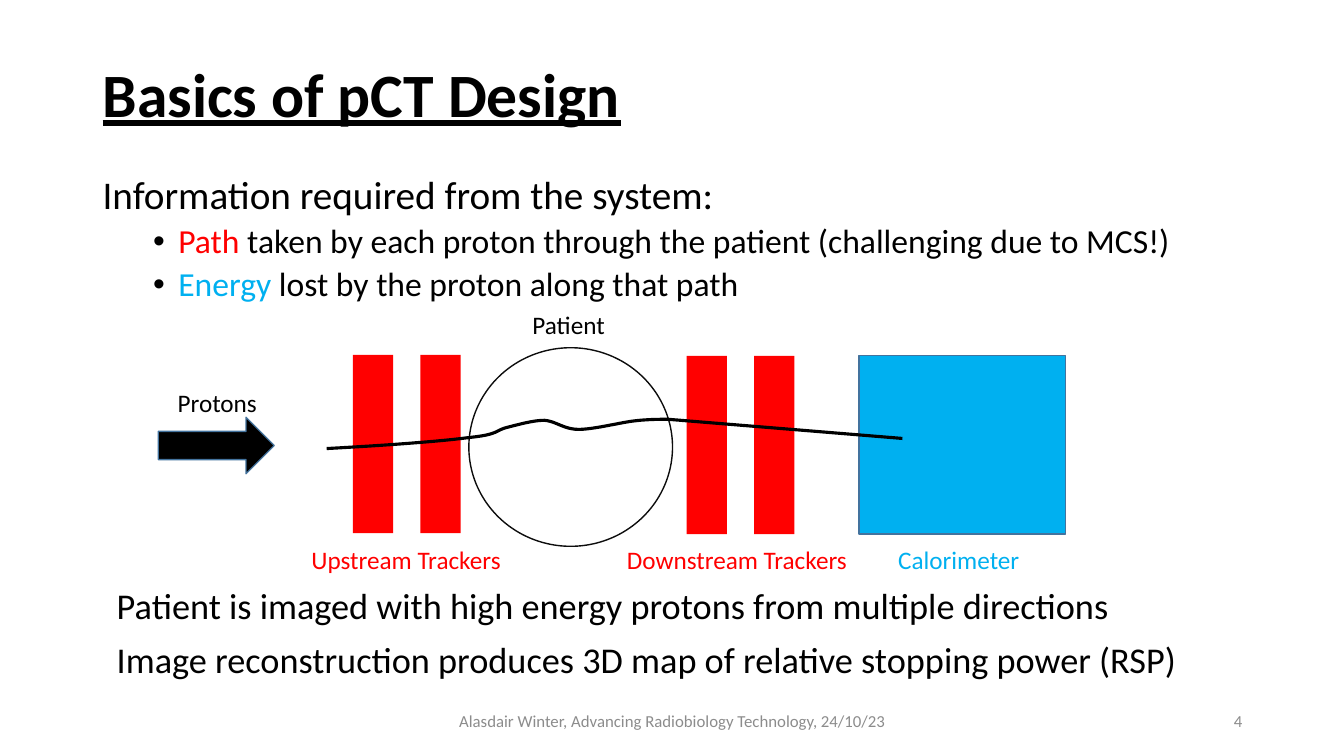
import pptx
import pptx.dml.color
import pptx.enum.shapes
import pptx.enum.text
import pptx.oxml
import pptx.oxml.ns
import pptx.util

Inches, Pt = pptx.util.Inches, pptx.util.Pt
SHAPE = pptx.enum.shapes.MSO_SHAPE
ALIGN = pptx.enum.text.PP_ALIGN
ANCHOR = pptx.enum.text.MSO_ANCHOR

BLACK, RED, BLUE, GREY, EDGE = "000000", "FF0000", "00B0F0", "8C8C8C", "43739E"


def color(value):
    return pptx.dml.color.RGBColor.from_string(value)


def apply(target, values):
    for name, value in values.items():
        setattr(target, name, value)


def bezier(p0, p1, p2, p3, steps=12):
    """Points along a cubic curve, leaving out its start."""
    for i in range(1, steps + 1):
        t = i / steps
        u = 1 - t
        yield tuple(u**3 * a + 3 * u * u * t * b + 3 * u * t * t * c + t**3 * d
                    for a, b, c, d in zip(p0, p1, p2, p3))


class SlideBuilder:
    font = "Calibri"

    def __init__(self, prs):
        self.s = prs.slides.add_slide(prs.slide_layouts[6])

    def text(self, box, paragraphs, anchor=ANCHOR.TOP):
        """Each paragraph is (runs, size, format); each run is (text, colour)."""
        sp = self.s.shapes.add_textbox(*map(Inches, box))
        tf = sp.text_frame
        apply(tf, {"word_wrap": True, "vertical_anchor": anchor})
        for i, (runs, size, fmt) in enumerate(paragraphs):
            p = tf.add_paragraph() if i else tf.paragraphs[0]
            fmt = dict(fmt)
            bullet = fmt.pop("bullet", False)
            font = fmt.pop("font", {})
            apply(p, fmt)
            if bullet:
                self.bullet(p)
            for words, fill in runs:
                r = p.add_run()
                r.text = words
                apply(r.font, {"name": self.font, "size": Pt(size), **font})
                r.font.color.rgb = color(fill)

    def bullet(self, p):
        pPr = p._p.get_or_add_pPr()
        pPr.set("marL", str(Inches(0.75)))
        pPr.set("indent", str(Inches(-0.25)))
        ns = pptx.oxml.ns.nsdecls("a")
        for xml in (f'<a:buClr {ns}><a:srgbClr val="{BLACK}"/></a:buClr>',
                    f'<a:buFont {ns} typeface="Arial"/>',
                    f'<a:buChar {ns} char="•"/>'):
            pPr.append(pptx.oxml.parse_xml(xml))

    def label(self, box, words, fill=BLACK, align=ALIGN.LEFT):
        self.text(box, [([(words, fill)], 18, {"alignment": align})])

    def footer(self, box, words, align):
        self.text(box, [([(words, GREY)], 12, {"alignment": align})], ANCHOR.MIDDLE)

    def style(self, sp, fill, line, width):
        sp.shadow.inherit = False
        if fill:
            sp.fill.solid()
            sp.fill.fore_color.rgb = color(fill)
        else:
            sp.fill.background()
        if line:
            sp.line.color.rgb = color(line)
            sp.line.width = Pt(width)
        else:
            sp.line.fill.background()

    def shape(self, kind, box, fill=None, line=None, width=1):
        sp = self.s.shapes.add_shape(kind, *map(Inches, box))
        self.style(sp, fill, line, width)

    def curve(self, start, curves, end, width):
        points = [start]
        for c1, c2, stop in curves:
            points.extend(bezier(points[-1], c1, c2, stop))
        points.append(end)
        emu = [(Inches(x), Inches(y)) for x, y in points]
        fb = self.s.shapes.build_freeform(*emu[0])
        fb.add_line_segments(emu[1:], close=False)
        self.style(fb.convert_to_shape(), None, BLACK, width)


def main():
    prs = pptx.Presentation()
    apply(prs, {"slide_width": Inches(13.33), "slide_height": Inches(7.5)})
    b = SlideBuilder(prs)

    # Title and required information
    major = {"line_spacing": 0.9, "space_before": Pt(10)}
    minor = {"line_spacing": 0.9, "space_before": Pt(5), "level": 1, "bullet": True}
    heading = {"line_spacing": 0.9, "font": {"bold": True, "underline": True}}
    b.text((0.92, 0.24, 11.5, 1.45),
           [([("Basics of pCT Design", BLACK)], 44, heading)], ANCHOR.MIDDLE)
    b.text((0.92, 1.69, 11.5, 1.42), [
        ([("Information required from the system:", BLACK)], 28, major),
        ([("Path", RED),
          (" taken by each proton through the patient (challenging due to MCS!)", BLACK)],
         24, minor),
        ([("Energy", BLUE), (" lost by the proton along that path", BLACK)], 24, minor),
    ])

    # Patient, trackers, beam and calorimeter
    b.shape(SHAPE.OVAL, (4.65, 3.45, 2.02, 1.97), line="0D0D0D")
    for left, top in ((3.5, 3.52), (4.17, 3.52), (6.81, 3.53), (7.48, 3.53)):
        b.shape(SHAPE.RECTANGLE, (left, top, 0.4, 1.77), RED)
    b.shape(SHAPE.RIGHT_ARROW, (1.57, 4.14, 1.15, 0.56), BLACK, EDGE)
    b.shape(SHAPE.RECTANGLE, (8.52, 3.53, 2.05, 1.77), BLUE, EDGE)

    # Diagram labels
    b.label((1.53, 3.79, 1.25, 0.4), "Protons", align=ALIGN.CENTER)
    b.label((4.57, 3.02, 2.14, 0.4), "Patient", align=ALIGN.CENTER)
    for left, width, words, fill in ((2.99, 2.14, "Upstream Trackers", RED),
                                     (6.12, 2.43, "Downstream Trackers", RED),
                                     (8.81, 2.43, "Calorimeter", BLUE)):
        b.label((left, 5.35, width, 0.4), words, fill)

    # Proton path
    b.curve((3.24, 4.45), [
        ((3.8, 4.42), (4.36, 4.38), (4.66, 4.34)),
        ((4.95, 4.31), (4.91, 4.27), (5.03, 4.24)),
        ((5.15, 4.21), (5.29, 4.17), (5.4, 4.17)),
        ((5.52, 4.18), (5.59, 4.26), (5.74, 4.26)),
        ((5.88, 4.26), (6.12, 4.2), (6.26, 4.18)),
        ((6.4, 4.16), (6.53, 4.16), (6.63, 4.16)),
    ], (8.95, 4.35), 2.25)

    # Conclusions and footer
    b.text((1.06, 5.79, 11.5, 1.15), [([(words, BLACK)], 25.9, major) for words in (
        "Patient is imaged with high energy protons from multiple directions",
        "Image reconstruction produces 3D map of relative stopping power (RSP)")])
    b.footer((4.42, 6.95, 4.5, 0.4),
             "Alasdair Winter, Advancing Radiobiology Technology, 24/10/23", ALIGN.CENTER)
    b.footer((9.42, 6.95, 3, 0.4), "4", ALIGN.RIGHT)

    prs.save("out.pptx")


if __name__ == "__main__":
    main()
